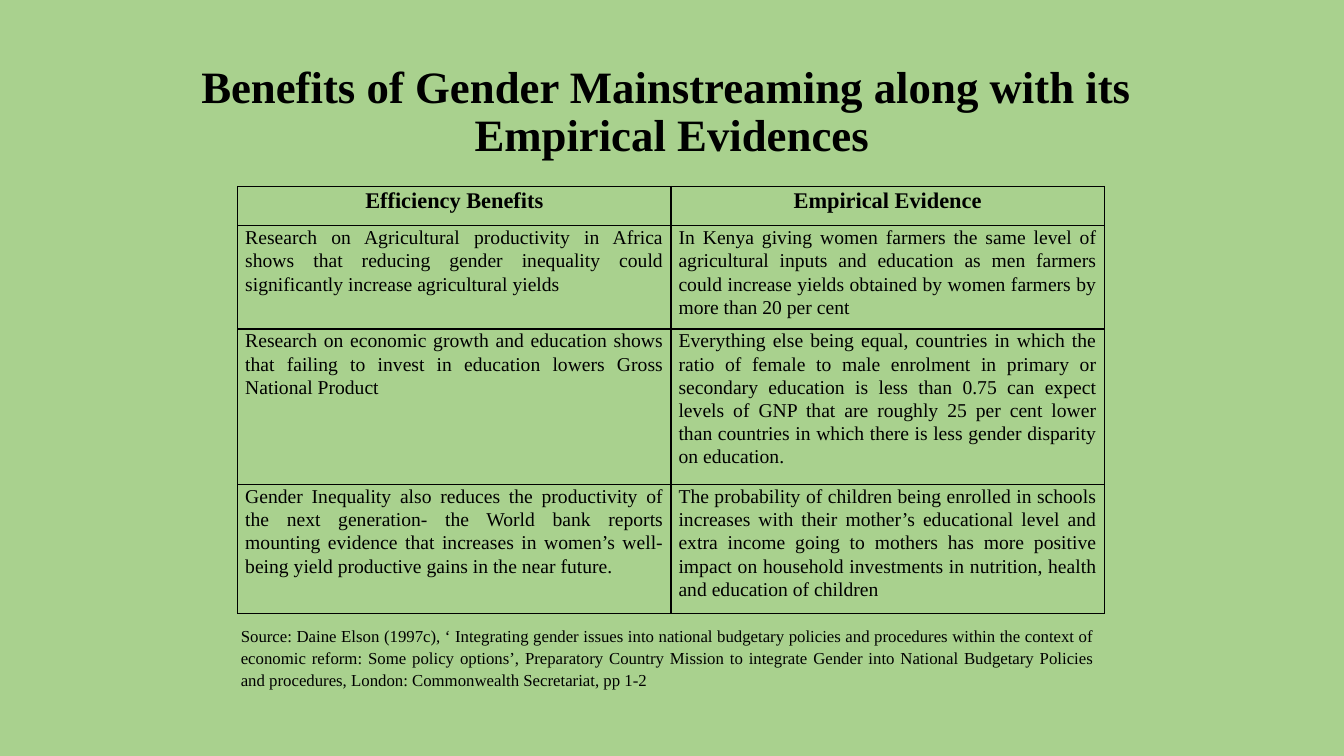
from lxml import etree
from pptx import Presentation
from pptx.dml.color import RGBColor
from pptx.enum.text import MSO_ANCHOR, PP_ALIGN
from pptx.oxml.ns import qn
from pptx.util import Cm, Pt

MID, TOP = MSO_ANCHOR.MIDDLE, MSO_ANCHOR.TOP
CENTER, JUST = PP_ALIGN.CENTER, PP_ALIGN.JUSTIFY
GREEN = RGBColor(0xA9, 0xD1, 0x8E)
BLACK = RGBColor(0, 0, 0)
FONT = "Times New Roman"

# Content
TITLE = "Benefits of Gender Mainstreaming along with its \nEmpirical Evidences"
ROWS = [
    ("Efficiency Benefits", "Empirical Evidence"),
    ("Research on Agricultural productivity in Africa shows that reducing "
     "gender inequality could significantly increase agricultural yields",
     "In Kenya giving women farmers the same level of agricultural inputs and "
     "education as men farmers could increase yields obtained by women "
     "farmers by more than 20 per cent"),
    ("Research on economic growth and education shows that failing to invest "
     "in education lowers Gross National Product",
     "Everything else being equal, countries in which the ratio of female to "
     "male enrolment in primary or secondary education is less than 0.75 can "
     "expect levels of GNP that are roughly 25 per cent lower than countries "
     "in which there is less gender disparity on education."),
    ("Gender Inequality also reduces the productivity of the next generation- "
     "the World bank reports mounting evidence that increases in women’s "
     "well-being yield productive gains in the near future.",
     "The probability of children being enrolled in schools increases with "
     "their mother’s educational level and extra income going to mothers has "
     "more positive impact on household investments in nutrition, health and "
     "education of children"),
]
SOURCE = (
    "Source: Daine Elson (1997c), ‘ Integrating gender issues into national "
    "budgetary policies and procedures within the context of economic reform: "
    "Some policy options’, Preparatory Country Mission to integrate Gender "
    "into National Budgetary Policies and procedures, London: Commonwealth "
    "Secretariat, pp 1-2")

# Layout in centimetres
HEIGHTS = (0.99, 2.6, 3.92, 3.25)
COL = 10.92


def write(frame, text, size=14, bold=False, align=JUST, gap=1.07):
    para = frame.paragraphs[0]
    para.text = text
    para.alignment = align
    para.line_spacing = gap
    for run in para.runs:
        font = run.font
        font.name, font.size, font.bold = FONT, Pt(size), bold
        font.color.rgb = BLACK


def add_box(slide, box, text, anchor=TOP, **style):
    frame = slide.shapes.add_textbox(*map(Cm, box)).text_frame
    frame.word_wrap = True
    frame.vertical_anchor = anchor
    write(frame, text, **style)


def add_edges(cell):
    props = cell._tc.get_or_add_tcPr()
    for side in ("lnL", "lnR", "lnT", "lnB"):
        line = etree.SubElement(props, qn("a:" + side), w=str(Pt(1)))
        fill = etree.SubElement(line, qn("a:solidFill"))
        etree.SubElement(fill, qn("a:srgbClr"), val=str(BLACK))


def add_grid(slide):
    grid = slide.shapes.add_table(
        len(ROWS), 2, Cm(5.99), Cm(4.7), Cm(2 * COL), Cm(sum(HEIGHTS))).table
    grid.first_row = grid.horz_banding = False
    for col in grid.columns:
        col.width = Cm(COL)
    for r, texts in enumerate(ROWS):
        grid.rows[r].height = Cm(HEIGHTS[r])
        style = {} if r else dict(size=16, bold=True, align=CENTER)
        for c, text in enumerate(texts):
            cell = grid.cell(r, c)
            cell.margin_left = cell.margin_right = Cm(0.19)
            cell.margin_top = cell.margin_bottom = 0
            add_edges(cell)
            cell.fill.background()
            write(cell.text_frame, text, **style)


def main():
    deck = Presentation()
    deck.slide_width, deck.slide_height = Cm(33.87), Cm(19.05)
    slide = deck.slides.add_slide(deck.slide_layouts[6])
    back = slide.background.fill
    back.solid()
    back.fore_color.rgb = GREEN

    # Title, table, source note
    add_box(slide, (2.33, 1.01, 29.21, 3.68), TITLE, anchor=MID,
            size=32, bold=True, align=CENTER, gap=0.9)
    add_grid(slide)
    add_box(slide, (5.82, 15.62, 22.02, 1.9), SOURCE, size=12)
    deck.save("out.pptx")


if __name__ == "__main__":
    main()
